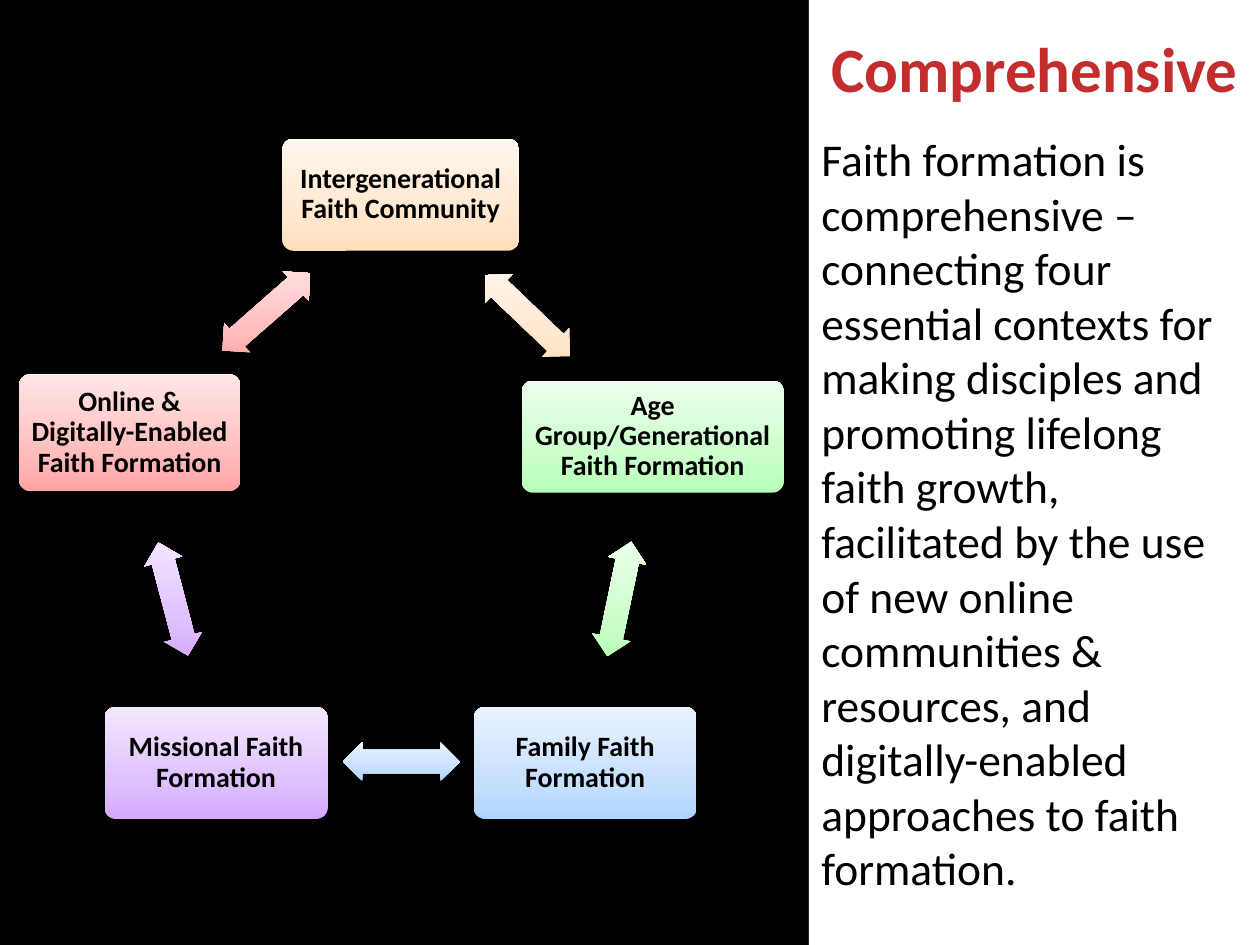
from lxml import etree
from pptx import Presentation
from pptx.dml.color import RGBColor
from pptx.enum.shapes import MSO_SHAPE as SHAPE
from pptx.enum.text import MSO_ANCHOR as ANCHOR, PP_ALIGN as ALIGN
from pptx.oxml.ns import qn
from pptx.util import Inches, Pt

BLACK = RGBColor(0x00, 0x00, 0x00)
WHITE = RGBColor(0xFF, 0xFF, 0xFF)
RED = RGBColor(0xC3, 0x2D, 0x2E)

# Gradient colours from bottom to top
ORANGE = [RGBColor.from_string(c) for c in ("FFDFBC", "FFE8D0", "FFF6ED")]
GREEN = [RGBColor.from_string(c) for c in ("B7FFB7", "CCFFCC", "ECFFEC")]
BLUE = [RGBColor.from_string(c) for c in ("B0D4FF", "C7E0FF", "EAF3FF")]
PURPLE = [RGBColor.from_string(c) for c in ("D5A9FF", "E0C2FF", "F3E8FF")]
PINK = [RGBColor.from_string(c) for c in ("FFA3A3", "FFBEBE", "FFE6E6")]


def add_plain_shape(kind, left, top, width, height):
    """Add a shape without outline or shadow."""
    sp = s.shapes.add_shape(kind, Inches(left), Inches(top), Inches(width), Inches(height))
    sp.shadow.inherit = False
    sp.line.fill.background()
    return sp


def fill_gradient(sp, colors):
    """Fill with three stops that stay upright when the shape is rotated."""
    sp.fill.gradient()
    grad = sp._element.spPr.find(qn("a:gradFill"))
    grad.set("rotWithShape", "0")
    stops = grad.find(qn("a:gsLst"))
    for stop in list(stops):
        stops.remove(stop)
    for pos, color in zip((0, 35000, 100000), colors):
        stop = etree.SubElement(stops, qn("a:gs"), pos=str(pos))
        etree.SubElement(stop, qn("a:srgbClr"), val=str(color))
    grad.find(qn("a:lin")).set("ang", str(270 * 60000))


prs = Presentation()
prs.slide_width, prs.slide_height = Inches(10), Inches(7.5)
s = prs.slides.add_slide(prs.slide_layouts[5])
s.background.fill.solid()
s.background.fill.fore_color.rgb = BLACK

# Contexts: text, box (left, top, width, height), arrow (left, top, rotation), colours
contexts = [
    ("Intergenerational Faith Community", (2.24, 1.1, 1.88, 0.89), (3.72, 2.35, 43.7), ORANGE),
    ("Age Group/Generational Faith Formation", (4.14, 3.02, 2.08, 0.89), (4.45, 4.6, 101.8), GREEN),
    ("Family Faith Formation", (3.76, 5.61, 1.77, 0.89), (2.72, 5.89, 180), BLUE),
    ("Missional Faith Formation", (0.83, 5.61, 1.77, 0.89), (0.91, 4.6, 255.3), PURPLE),
    ("Online & Digitally-Enabled Faith Formation", (0.15, 2.97, 1.76, 0.93), (1.65, 2.32, 318.7), PINK),
]
for text, box, (left, top, rotation), colors in contexts:
    sp = add_plain_shape(SHAPE.ROUNDED_RECTANGLE, *box)
    sp.adjustments[0] = 0.1
    fill_gradient(sp, colors)
    tf = sp.text_frame
    tf.word_wrap = True
    tf.vertical_anchor = ANCHOR.MIDDLE
    tf.margin_left = tf.margin_right = Inches(0.05)
    p = tf.paragraphs[0]
    p.text = text
    p.alignment = ALIGN.CENTER
    p.line_spacing = 0.9
    p.font.name, p.font.size, p.font.bold = "Calibri", Pt(16), True
    p.font.color.rgb = BLACK

    arrow = add_plain_shape(SHAPE.LEFT_RIGHT_ARROW, left, top, 0.93, 0.31)
    arrow.adjustments[0], arrow.adjustments[1] = 0.6, 0.5
    arrow.rotation = rotation
    fill_gradient(arrow, colors)

# Explanation panel
panel = add_plain_shape(SHAPE.RECTANGLE, 6.42, -0.01, 3.58, 7.67)
panel.fill.solid()
panel.fill.fore_color.rgb = WHITE
tf = panel.text_frame
tf.word_wrap = True
tf.vertical_anchor = ANCHOR.TOP
tf.margin_top = Inches(1.05)
p = tf.paragraphs[0]
p.text = (
    "Faith formation is comprehensive – connecting four essential contexts "
    "for making disciples and promoting lifelong faith growth, facilitated by "
    "the use of new online communities & resources, and digitally-enabled "
    "approaches to faith formation."
)
p.alignment = ALIGN.LEFT
p.font.name, p.font.size = "Calibri", Pt(26)
p.font.color.rgb = BLACK

# Title, brought in front of the panel
title = s.shapes.title
title.left, title.top = Inches(6.42), Inches(0.23)
title.width, title.height = Inches(3.58), Inches(0.61)
s.shapes._spTree.append(title._element)
tf = title.text_frame
tf.word_wrap = True
tf.vertical_anchor = ANCHOR.MIDDLE
tf.margin_top = tf.margin_bottom = 0
p = tf.paragraphs[0]
p.text = "Comprehensive"
p.alignment = ALIGN.CENTER
p.font.name, p.font.size, p.font.bold = "Calibri", Pt(36), True
p.font.color.rgb = RED

prs.save("out.pptx")
